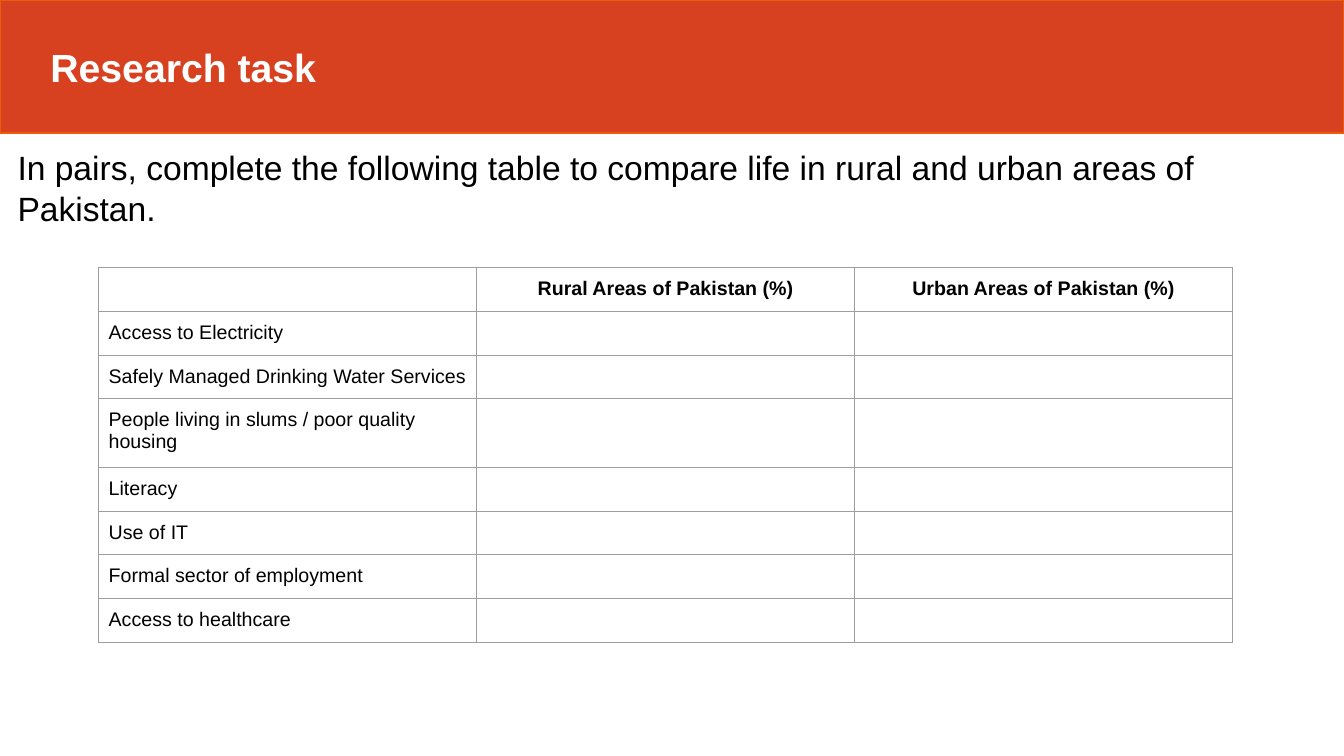
from lxml import etree
from pptx import Presentation
from pptx.dml.color import RGBColor
from pptx.enum.text import MSO_ANCHOR, MSO_AUTO_SIZE, PP_ALIGN
from pptx.oxml.ns import qn
from pptx.util import Pt

LEFT, CENTER = PP_ALIGN.LEFT, PP_ALIGN.CENTER
TOP, MIDDLE = MSO_ANCHOR.TOP, MSO_ANCHOR.MIDDLE
NO_AUTOFIT = MSO_AUTO_SIZE.NONE
TITLE_ONLY = 5

SLIDE_WIDTH, SLIDE_HEIGHT = 960, 540
RED, ORANGE, GREY = "D74120", "EA5B0C", "9E9E9E"
BLACK, WHITE = "000000", "FFFFFF"

TITLE_FONT = {"name": "Arial", "size": Pt(28), "bold": True}
TASK_FONT = {"name": "Arial", "size": Pt(24), "bold": False}
HEADER_FONT = {"name": "Arial", "size": Pt(14), "bold": True}
LABEL_FONT = {"name": "Arial", "size": Pt(14), "bold": False}

HEADERS = ["", "Rural Areas of Pakistan (%)", "Urban Areas of Pakistan (%)"]
TOPICS = [
    "Access to Electricity",
    "Safely Managed Drinking Water Services",
    "People living in slums / poor quality housing",
    "Literacy",
    "Use of IT",
    "Formal sector of employment",
    "Access to healthcare",
]
COLUMN_WIDTH, ROW_HEIGHT, TALL_ROW_HEIGHT = 270, 31.2, 49
TALL_ROW = 3


def color(hex_value):
    return RGBColor.from_string(hex_value)


def set_values(target, values):
    for name, value in values.items():
        setattr(target, name, value)


def place(shape, left, top, width, height):
    set_values(shape, {"left": Pt(left), "top": Pt(top),
                       "width": Pt(width), "height": Pt(height)})


def write(frame, text, font, hex_value, align=LEFT):
    para = frame.paragraphs[0]
    para.alignment = align
    span = para.add_run()
    span.text = text
    set_values(span.font, font)
    span.font.color.rgb = color(hex_value)


def format_title(page, text):
    title = page.shapes.title
    place(title, 0, 0, SLIDE_WIDTH, 95)
    title.fill.solid()
    title.fill.fore_color.rgb = color(RED)
    title.line.color.rgb = color(ORANGE)
    title.line.width = Pt(1)
    set_values(title.text_frame, {
        "auto_size": NO_AUTOFIT, "word_wrap": True, "vertical_anchor": MIDDLE,
        "margin_left": Pt(36), "margin_right": Pt(7.2),
        "margin_top": Pt(3.6), "margin_bottom": Pt(3.6)})
    write(title.text_frame, text, TITLE_FONT, WHITE)


def add_task(page, text):
    box = page.shapes.add_textbox(Pt(5.4), Pt(101.5), Pt(940), Pt(65.4))
    box.text_frame.word_wrap = True
    write(box.text_frame, text, TASK_FONT, BLACK)


def add_borders(cell):
    properties = cell._tc.get_or_add_tcPr()
    for side in ("lnL", "lnR", "lnT", "lnB"):
        line = etree.SubElement(properties, qn(f"a:{side}"), w=str(Pt(0.75)))
        fill = etree.SubElement(line, qn("a:solidFill"))
        etree.SubElement(fill, qn("a:srgbClr"), val=GREY)


def format_cell(cell, text, font, align):
    add_borders(cell)
    cell.fill.background()
    if text:
        set_values(cell, {"vertical_anchor": TOP,
                          "margin_left": Pt(7.2), "margin_right": Pt(7.2),
                          "margin_top": Pt(7.2), "margin_bottom": Pt(7.2)})
        write(cell.text_frame, text, font, BLACK, align)


def add_comparison_table(page):
    rows = [HEADERS] + [[topic, "", ""] for topic in TOPICS]
    heights = [TALL_ROW_HEIGHT if index == TALL_ROW else ROW_HEIGHT
               for index in range(len(rows))]
    frame = page.shapes.add_table(
        len(rows), len(HEADERS), Pt(70.4), Pt(191.2),
        Pt(COLUMN_WIDTH * len(HEADERS)), Pt(sum(heights)))
    table = frame.table
    set_values(table, {"first_row": False, "horz_banding": False})
    for column in table.columns:
        column.width = Pt(COLUMN_WIDTH)
    for row_index, texts in enumerate(rows):
        table.rows[row_index].height = Pt(heights[row_index])
        font, align = (LABEL_FONT, LEFT) if row_index else (HEADER_FONT, CENTER)
        for column_index, text in enumerate(texts):
            format_cell(table.cell(row_index, column_index), text, font, align)


def main():
    deck = Presentation()
    set_values(deck, {"slide_width": Pt(SLIDE_WIDTH),
                      "slide_height": Pt(SLIDE_HEIGHT)})
    page = deck.slides.add_slide(deck.slide_layouts[TITLE_ONLY])

    # Title band
    format_title(page, "Research task")

    # Task and table to fill in
    add_task(page, "In pairs, complete the following table to compare life "
                   "in rural and urban areas of Pakistan.")
    add_comparison_table(page)

    deck.save("out.pptx")


if __name__ == "__main__":
    main()
